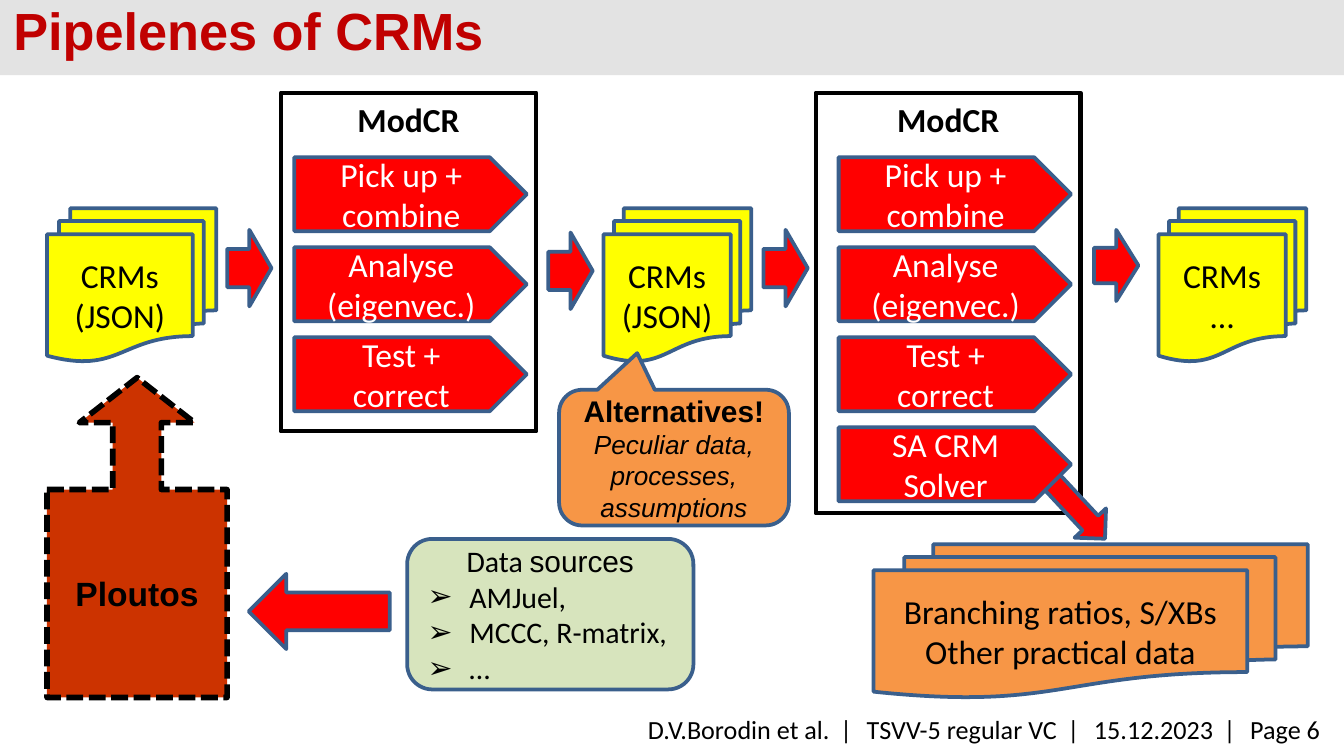
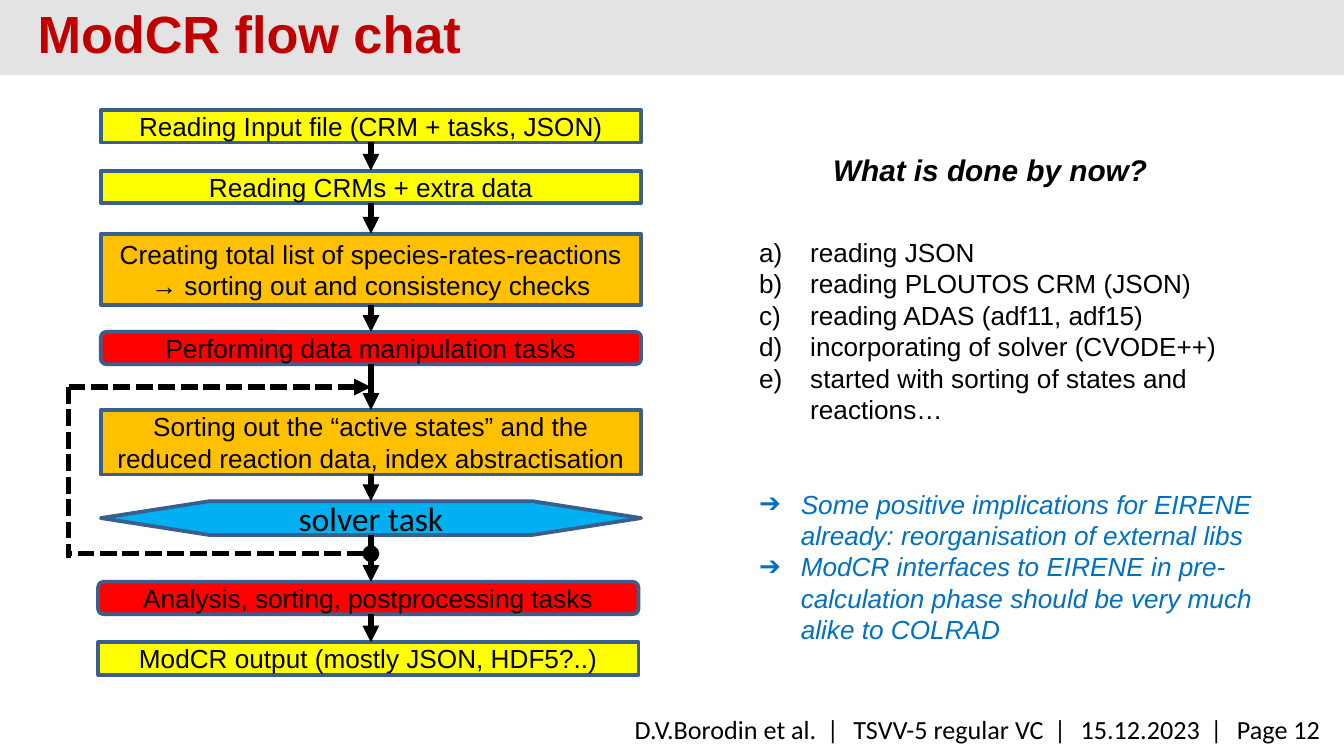
from dataclasses import dataclass

from lxml.etree import SubElement
from pptx import Presentation
from pptx.dml.color import RGBColor
from pptx.enum.dml import MSO_LINE
from pptx.enum.shapes import MSO_CONNECTOR, MSO_SHAPE
from pptx.enum.text import MSO_ANCHOR, MSO_AUTO_SIZE, PP_ALIGN
from pptx.oxml.ns import qn
from pptx.util import Inches, Pt


@dataclass(frozen=True)
class Theme:
    band: str = "E3E3E3"
    title: str = "C00000"
    edge: str = "3A5F8C"
    black: str = "000000"
    white: str = "FFFFFF"
    red: str = "FF0000"
    brick: str = "CC3300"
    yellow: str = "FFFF00"
    amber: str = "FFC000"
    orange: str = "F79646"
    green: str = "D7E4BD"
    cyan: str = "00B0F0"
    blue: str = "0070C0"
    sans: str = "Arial"
    body: str = "Calibri"
    head: int = 28
    large: int = 18
    mid: int = 16
    small: int = 14


T = Theme()
LABEL = {"size": T.large, "name": T.body, "color": T.black}
PLATE = {**LABEL, "color": T.white}
PLAIN = {"size": T.small, "name": T.sans, "color": T.black}
NOTE = {**PLAIN, "italic": True, "color": T.blue}
LEFT, MID, RIGHT = PP_ALIGN.LEFT, PP_ALIGN.CENTER, PP_ALIGN.RIGHT


@dataclass
class Para:
    """A paragraph of runs, each a string or a (string, format) pair."""
    runs: list
    align: PP_ALIGN = MID
    bullet: tuple = ()
    indent: float = 0
    before: float = 0


def style(font, fmt):
    for key, val in fmt.items():
        if key == "color":
            font.color.rgb = RGBColor.from_string(val)
        else:
            setattr(font, key, Pt(val) if key == "size" else val)


def write(frame, paras, fmt, anchor=MSO_ANCHOR.MIDDLE, wrap=True):
    frame.word_wrap = wrap
    frame.vertical_anchor = anchor
    for i, item in enumerate(paras):
        item = item if isinstance(item, Para) else Para([item])
        para = frame.add_paragraph() if i else frame.paragraphs[0]
        para.alignment = item.align
        if item.before:
            para.space_before = Pt(item.before)
        if item.bullet:
            tag, key, val = item.bullet
            props = para._p.get_or_add_pPr()
            props.set("marL", str(Inches(item.indent)))
            props.set("indent", str(-Inches(item.indent)))
            SubElement(props, qn("a:buFont")).set("typeface", T.sans)
            SubElement(props, qn(tag)).set(key, val)
        for part in item.runs:
            text, extra = part if isinstance(part, tuple) else (part, {})
            for j, line in enumerate(text.split("\n")):
                if j:
                    para.add_line_break()
                if line:
                    run = para.add_run()
                    run.text = line
                    style(run.font, {**fmt, **extra})


def shape(slide, kind, box, fill=None, edge=T.edge, width=2, adjust=(), turn=0):
    item = slide.shapes.add_shape(kind, *map(Inches, box))
    item.shadow.inherit = False
    item.rotation = turn
    for i, val in enumerate(adjust):
        item.adjustments[i] = val
    if fill:
        item.fill.solid()
        item.fill.fore_color.rgb = RGBColor.from_string(fill)
    else:
        item.fill.background()
    if edge:
        item.line.color.rgb = RGBColor.from_string(edge)
        item.line.width = Pt(width)
    else:
        item.line.fill.background()
    return item


def label(slide, box, paras, fmt, **opts):
    item = slide.shapes.add_textbox(*map(Inches, box))
    write(item.text_frame, paras, fmt, MSO_ANCHOR.TOP, **opts)
    return item


def link(slide, start, end, head=None, tail=None, dash=False):
    ends = map(Inches, (*start, *end))
    item = slide.shapes.add_connector(MSO_CONNECTOR.STRAIGHT, *ends)
    item.line.color.rgb = RGBColor.from_string(T.black)
    item.line.width = Pt(3)
    if dash:
        item.line.dash_style = MSO_LINE.SQUARE_DOT
    line = item.line._get_or_add_ln()
    for tag, kind in (("a:headEnd", head), ("a:tailEnd", tail)):
        if kind:
            SubElement(line, qn(tag)).set("type", kind)
    SubElement(item._element.spPr, qn("a:effectLst"))


def page(deck, title, left, top, num):
    """Add a slide with its band, title and footer."""
    slide = deck.slides.add_slide(deck.slide_layouts[5])
    band = shape(slide, MSO_SHAPE.RECTANGLE, (0, 0, 10, 0.56), T.band, None)
    slide.shapes._spTree.insert(2, band._element)
    head = slide.shapes.title
    box = {"left": left, "top": top, "width": 7.01, "height": 0.57}
    for key, val in box.items():
        setattr(head, key, Inches(val))
    head.text_frame.auto_size = MSO_AUTO_SIZE.NONE
    fmt = {"size": T.head, "name": T.sans, "bold": True, "color": T.title}
    write(head.text_frame, [Para([title], LEFT)], fmt, MSO_ANCHOR.TOP)

    parts = ["D.V.Borodin et al.", "TSVV-5 regular VC", "15.12.2023", f"Page {num}"]
    runs = [run for part in parts for run in (" | ", part)][1:]
    foot = label(slide, (1.93, 5.26, 7.99, 0.34), [Para(runs, RIGHT)],
                 {**LABEL, "size": T.small})
    for run in foot.text_frame.paragraphs[0].runs[1::2]:
        run._r.get_or_add_rPr().set("spc", "230")
    return slide


def stack(slide, box, fill, lines):
    """Draw a pile of documents."""
    item = shape(slide, MSO_SHAPE.FLOWCHART_MULTIDOCUMENT, box, fill)
    write(item.text_frame, lines, LABEL)


def arrow(slide, box, turn=180):
    shape(slide, MSO_SHAPE.LEFT_ARROW, box, T.red, turn=turn)


def model(slide, box, inset, steps, drain=False):
    """Draw a ModCR frame, a plate for each step and the arrow out."""
    left, top, width, high = box
    frame = shape(slide, MSO_SHAPE.RECTANGLE, box, edge=T.black, width=2.25)
    write(frame.text_frame, ["ModCR"], {**LABEL, "bold": True}, MSO_ANCHOR.TOP)
    if drain:
        arrow(slide, (left + width - 0.39, top + high - 0.22, 0.68, 0.32), 227)
    for i, lines in enumerate(steps):
        spot = (left + inset, top + 0.48 + 0.67 * i, 1.73, 0.55)
        plate = shape(slide, MSO_SHAPE.PENTAGON, spot, T.red)
        write(plate.text_frame, lines, PLATE)


def source(slide, box):
    """Draw the data sources with their arrow into Ploutos."""
    left, top = box[:2]
    item = shape(slide, MSO_SHAPE.ROUNDED_RECTANGLE, box, T.green)
    names = ["AMJuel,", "MCCC, R-matrix,", "…"]
    mark = ("a:buChar", "char", "➢")
    paras = [Para(["Data ", ("sources", {"name": T.sans})])]
    paras += [Para([name], LEFT, mark, 0.31) for name in names]
    write(item.text_frame, paras, {**LABEL, "size": T.mid})
    arrow(slide, (left - 1.18, top + 0.26, 1.05, 0.56), 0)


def ploutos(slide, box):
    item = shape(slide, MSO_SHAPE.UP_ARROW_CALLOUT, box, T.brick, T.black, 3,
                 (0.27, 0.32, 0.25, 0.65))
    item.line.dash_style = MSO_LINE.SQUARE_DOT
    write(item.text_frame, ["Ploutos"], {**LABEL, "name": T.sans, "bold": True})


def callout(slide, box):
    item = shape(slide, MSO_SHAPE.ROUNDED_RECTANGULAR_CALLOUT, box, T.orange,
                 adjust=(-0.16, -0.77, 0.17))
    runs = [("Alternatives!\n", {"size": T.mid, "bold": True}),
            ("Peculiar data, processes, assumptions", {"italic": True})]
    write(item.text_frame, [Para(runs)], PLAIN)


def pipes(deck):
    slide = page(deck, "Pipelenes of CRMs", 0, -0.06, 6)
    ploutos(slide, (0.35, 2.81, 1.34, 2.38))
    source(slide, (3.03, 4.01, 2.13, 1.12))
    for left, width, last in ((0.35, 1.26, "(JSON)"), (4.49, 1.1, "(JSON)"),
                              (8.62, 1.1, "…")):
        stack(slide, (left, 1.55, width, 1.14), T.yellow, ["CRMs", last])
    for left, top, high in ((1.69, 1.71, 0.57), (4.08, 1.73, 0.57),
                            (5.68, 1.71, 0.57), (8.14, 1.71, 0.53)):
        arrow(slide, (left, top, 0.33, high))
    steps = [["Pick up +", "combine"], ["Analyse (eigenvec.)"], ["Test +", "correct"]]
    model(slide, (2.09, 0.69, 1.9, 2.52), 0.1, steps)
    model(slide, (6.07, 0.69, 1.97, 3.13), 0.17, steps + [["SA CRM\nSolver"]], True)
    stack(slide, (6.5, 4.05, 3.23, 1.14), T.orange,
          ["Branching ratios, S/XBs", "Other practical data"])
    callout(slide, (4.16, 2.9, 1.71, 1.01))


def chart(slide, left, top):
    """Draw the chain of steps, its arrows and the dashed loop."""
    step, task = MSO_SHAPE.FLOWCHART_PROCESS, MSO_SHAPE.FLOWCHART_ALTERNATE_PROCESS
    solve = MSO_SHAPE.FLOWCHART_PREPARATION
    rows = [
        (step, 0, 0, 0.24, T.yellow, ["Reading Input file (CRM + tasks, JSON)"]),
        (step, 0, 0.45, 0.24, T.yellow, ["Reading CRMs + extra data"]),
        (step, 0, 0.92, 0.53, T.amber,
         ["Creating total list of species-rates-reactions",
          "→ sorting out and consistency checks"]),
        (task, 0, 1.65, 0.24, T.red, ["Performing data manipulation tasks"]),
        (step, 0, 2.23, 0.48, T.amber,
         ["Sorting out the “active states” and the reduced reaction data, "
          "index abstractisation"]),
        (solve, 0, 2.91, 0.25, T.cyan, ["solver task"]),
        (task, -0.02, 3.51, 0.24, T.red, ["Analysis, sorting, postprocessing tasks"]),
        (step, -0.02, 3.96, 0.24, T.yellow, ["ModCR output (mostly JSON, HDF5?..)"]),
    ]
    for kind, shift, down, high, fill, lines in rows:
        item = shape(slide, kind, (left + shift, top + down, 4.02, high), fill)
        write(item.text_frame, lines, LABEL if kind == solve else PLAIN)

    axis = left + 2.01
    for prev, row in zip(rows, rows[1:]):
        link(slide, (axis, top + prev[2] + prev[3]), (axis, top + row[2]),
             tail="triangle")
    side, high, low = left - 0.24, top + 2.06, top + 3.3
    link(slide, (axis, low), (side, low), head="oval", dash=True)
    link(slide, (side, high), (side, low + 0.03), dash=True)
    link(slide, (side, high), (axis, high), tail="triangle", dash=True)


def status(slide, left, top):
    """List what is done and what follows from it."""
    label(slide, (left + 0.55, top, 2.6, 0.37),
          [Para(["What is done by now?"], LEFT)],
          {**PLAIN, "size": T.mid, "bold": True, "italic": True}, wrap=False)
    done = ["reading JSON", "reading PLOUTOS CRM (JSON)",
            "reading ADAS (adf11, adf15)", "incorporating of solver (CVODE++)",
            "started with sorting of states and reactions…"]
    gains = ["Some positive implications for EIRENE already: "
             "reorganisation of external libs",
             "ModCR interfaces to EIRENE in pre-calculation phase "
             "should be very much alike to COLRAD"]
    count = ("a:buAutoNum", "type", "alphaLcParenR")
    mark = ("a:buChar", "char", "➔")
    paras = [Para([text], LEFT, count, 0.38) for text in done]
    paras += [Para([(text, NOTE)], LEFT, mark, 0.31, 0 if i else 34)
              for i, text in enumerate(gains)]
    label(slide, (left, top + 0.63, 4.02, 3.16), paras, PLAIN)


def flow(deck):
    slide = page(deck, "ModCR flow chat", 0.18, -0.04, 12)
    chart(slide, 0.75, 0.82)
    status(slide, 5.55, 1.08)


def main():
    deck = Presentation()
    deck.slide_width = Inches(10)
    deck.slide_height = deck.slide_width * 9 // 16
    pipes(deck)
    flow(deck)
    deck.save("out.pptx")


if __name__ == "__main__":
    main()
